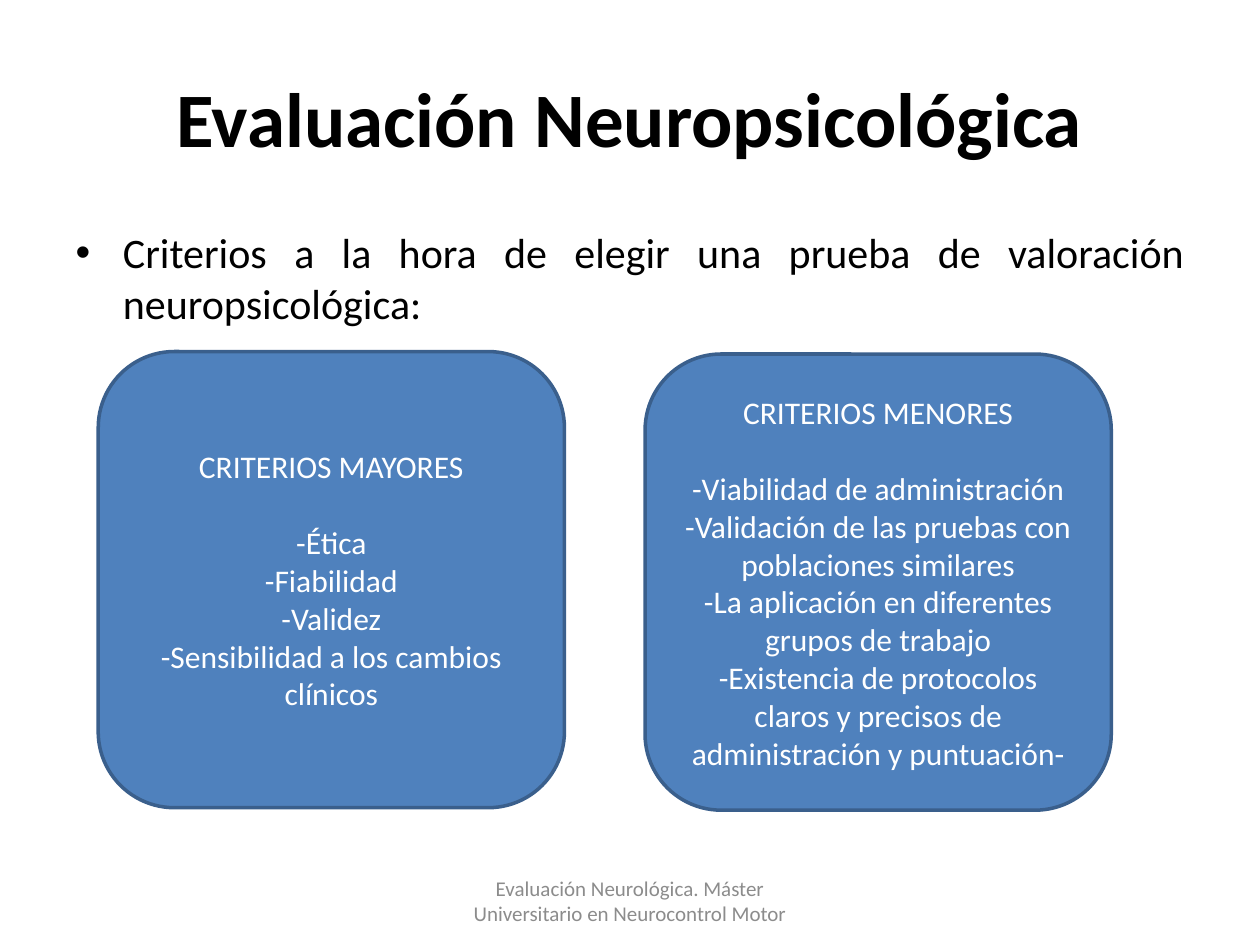
from pptx import Presentation
from pptx.dml.color import RGBColor
from pptx.enum.shapes import MSO_SHAPE
from pptx.enum.text import MSO_ANCHOR, PP_ALIGN
from pptx.util import Inches, Pt

ROUNDED = MSO_SHAPE.ROUNDED_RECTANGLE
MIDDLE = MSO_ANCHOR.MIDDLE
CENTER, JUSTIFY = PP_ALIGN.CENTER, PP_ALIGN.JUSTIFY

TITLE = "Evaluación Neuropsicológica"
INTRO = "Criterios a la hora de elegir una prueba de valoración neuropsicológica:"
FOOTER = "Evaluación Neurológica. Máster Universitario en Neurocontrol Motor"
CRITERIA = [
    ("CRITERIOS MAYORES", [
        "-Ética",
        "-Fiabilidad",
        "-Validez",
        "-Sensibilidad a los cambios clínicos",
    ]),
    ("CRITERIOS MENORES", [
        "-Viabilidad de administración",
        "-Validación de las pruebas con poblaciones similares",
        "-La aplicación en diferentes grupos de trabajo",
        "-Existencia de protocolos claros y precisos de administración y puntuación-",
    ]),
]

WIDTH, HEIGHT = 10, 7.5
MARGIN = 0.05 * WIDTH
CONTENT_WIDTH = WIDTH - 2 * MARGIN
CARD_LEFT, CARD_TOP = 0.78, 2.79
CARD_WIDTH, CARD_HEIGHT = 3.7, 3.62
CARD_STEP, CARD_DROP = 4.34, 0.02
FOOTER_WIDTH = 3.17
HEADING_GAP = 22


def color(value):
    return RGBColor.from_string(value)


def place(part, left, top, width, height):
    part.left, part.top = Inches(left), Inches(top)
    part.width, part.height = Inches(width), Inches(height)


def write(part, text, size, ink, align, bold=False):
    frame = part.text_frame
    frame.text = text
    frame.word_wrap = True
    for paragraph in frame.paragraphs:
        paragraph.alignment = align
        for run in paragraph.runs:
            run.font.name = "Calibri"
            run.font.size = Pt(size)
            run.font.bold = bold
            run.font.color.rgb = color(ink)
    return frame


def add_card(slide, column, heading, items):
    card = slide.shapes.add_shape(
        ROUNDED,
        Inches(CARD_LEFT + column * CARD_STEP),
        Inches(CARD_TOP + column * CARD_DROP),
        Inches(CARD_WIDTH), Inches(CARD_HEIGHT))
    card.shadow.inherit = False
    card.fill.solid()
    card.fill.fore_color.rgb = color("4F81BD")
    card.line.color.rgb = color("3A5F8C")
    card.line.width = Pt(2)
    frame = write(card, "\n".join([heading, *items]), 18, "FFFFFF", CENTER)
    frame.vertical_anchor = MIDDLE
    frame.paragraphs[0].space_after = Pt(HEADING_GAP)


def main():
    deck = Presentation()
    deck.slide_width, deck.slide_height = Inches(WIDTH), Inches(HEIGHT)
    slide = deck.slides.add_slide(deck.slide_layouts[1])

    title, intro = slide.placeholders
    place(title, MARGIN, 0.3, CONTENT_WIDTH, 1.25)
    write(title, TITLE, 44, "000000", CENTER, bold=True).vertical_anchor = MIDDLE
    place(intro, MARGIN, 1.75, CONTENT_WIDTH, 4.95)
    write(intro, INTRO, 24, "000000", JUSTIFY)

    footer = slide.shapes.add_textbox(
        Inches((WIDTH - FOOTER_WIDTH) / 2), Inches(6.95),
        Inches(FOOTER_WIDTH), Inches(0.4))
    write(footer, FOOTER, 12, "8C8C8C", CENTER).vertical_anchor = MIDDLE

    for column, (heading, items) in enumerate(CRITERIA):
        add_card(slide, column, heading, items)

    deck.save("out.pptx")


if __name__ == "__main__":
    main()
